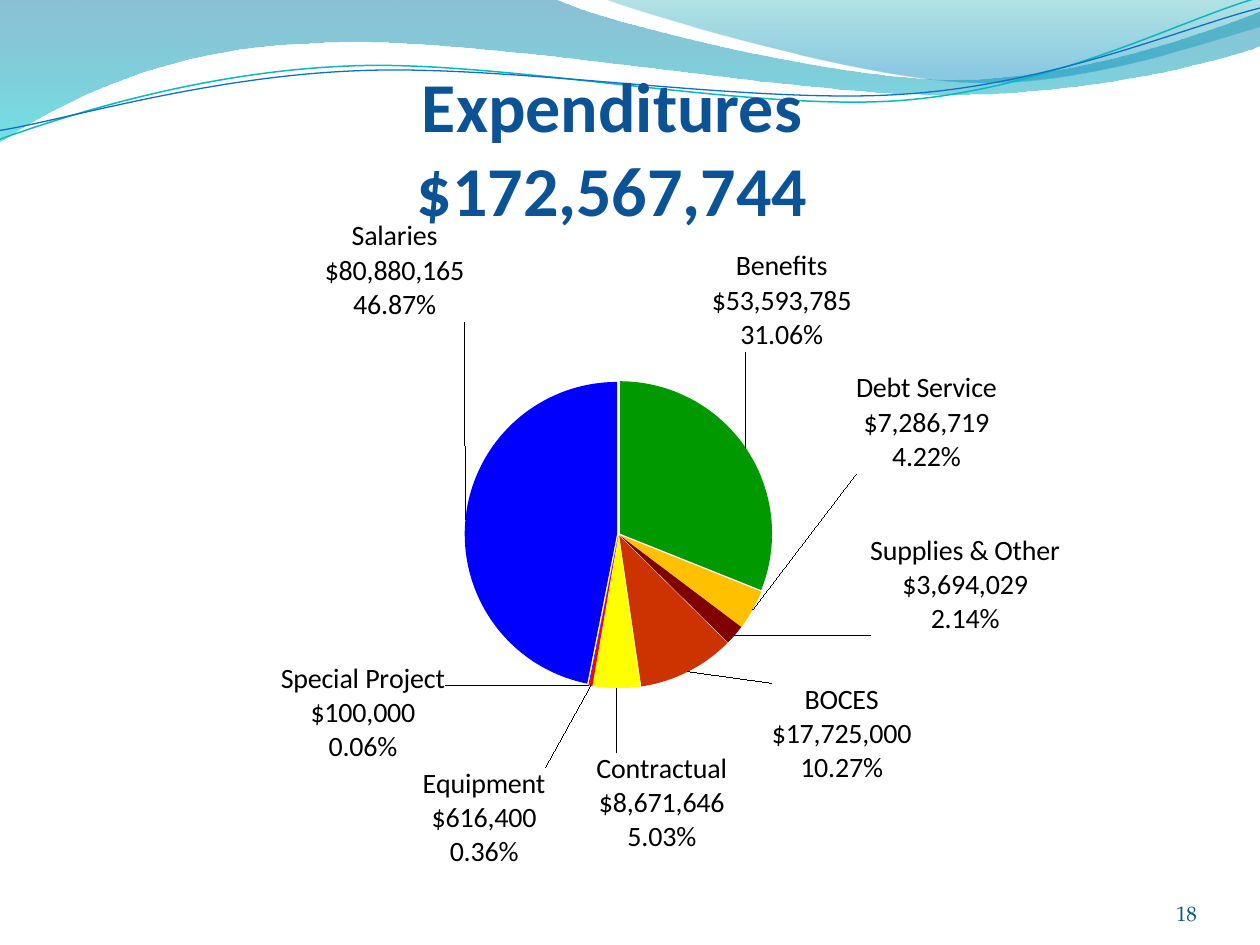
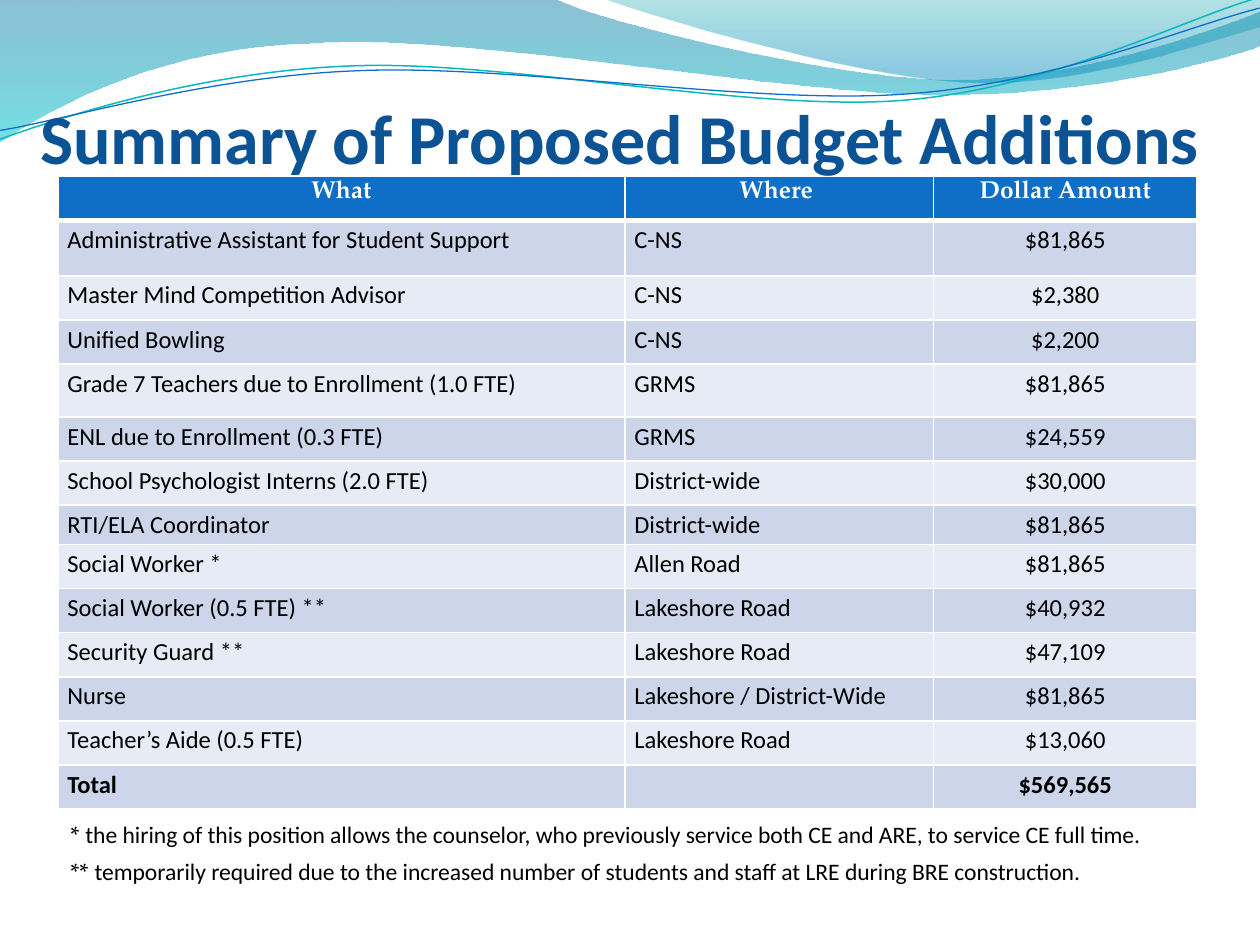
from lxml import etree
from pptx import Presentation
from pptx.chart.data import CategoryChartData
from pptx.dml.color import RGBColor
from pptx.enum.chart import XL_CHART_TYPE as ChartType
from pptx.enum.text import MSO_ANCHOR as Anchor, MSO_AUTO_SIZE as AutoSize, PP_ALIGN as Align
from pptx.oxml import parse_xml
from pptx.oxml.ns import nsdecls, qn
from pptx.util import Inches, Pt

BLACK = RGBColor(0, 0, 0)
WHITE = RGBColor(0xFF, 0xFF, 0xFF)
TITLE_BLUE = RGBColor(0x0B, 0x53, 0x94)
NUMBER_TEAL = RGBColor(0x04, 0x5D, 0x75)
HEADER_BLUE = RGBColor(0x0F, 0x6F, 0xC6)
LINE_TEAL = RGBColor(0x0A, 0xB8, 0xBF)
BAND_DARK = RGBColor(0xCC, 0xD5, 0xEA)
BAND_LIGHT = RGBColor(0xE7, 0xEB, 0xF5)
WAVE_NAVY = RGBColor(0x00, 0x74, 0xA1)
WAVE_CYAN = RGBColor(0x00, 0xC6, 0xCF)
WAVE_TEAL = RGBColor(0x00, 0xA1, 0xA9)
WAVE_SKY = RGBColor(0x00, 0x8B, 0xBF)
SANS = "Calibri"
SERIF = "TeX Gyre Pagella"

prs = Presentation()
prs.slide_width, prs.slide_height = Inches(10), Inches(7.5)
title_only = prs.slide_layouts[5]


def add_titled_slide(title, left, top, width, height):
    slide = prs.slides.add_slide(title_only)
    heading = slide.shapes.title
    heading.left, heading.top = Inches(left), Inches(top)
    heading.width, heading.height = Inches(width), Inches(height)
    frame = heading.text_frame
    frame.text = title
    frame.auto_size = AutoSize.NONE
    frame.vertical_anchor = Anchor.BOTTOM
    frame.margin_left = frame.margin_right = frame.margin_bottom = 0
    paragraph = frame.paragraphs[0]
    paragraph.alignment = Align.CENTER
    font = paragraph.font
    font.name, font.size, font.bold = SANS, Pt(40), True
    font.color.rgb = TITLE_BLUE
    return slide


def add_curve(shapes, segments, closed):
    """Draw a start point followed by segments of one point (line) or three (cubic curve)."""
    points = [(Inches(x), Inches(y)) for segment in segments for x, y in segment]
    builder = shapes.build_freeform(*points[0])
    builder.add_line_segments(points[1:], close=closed)
    curve = builder.convert_to_shape()
    lines = iter(list(curve.element.iter(qn("a:lnTo"))))
    for segment in segments[1:]:
        steps = [next(lines) for _ in segment]
        if len(steps) == 3:
            bezier = etree.Element(qn("a:cubicBezTo"))
            steps[0].addprevious(bezier)
            for step in steps:
                bezier.append(step[0])
                step.getparent().remove(step)
    curve.shadow.inherit = False
    return curve


expenditures = add_titled_slide("Expenditures \v$172,567,744 ", 0.42, 0.75, 9, 1.08)
additions = add_titled_slide("Summary of Proposed Budget Additions ", 0.27, 0.83, 9.42, 0.59)

# Waves across the top, shared through the slide master
wide_wave = [[(0, 0)], [(4.4, -0.01)],
             [(4.76, 0.17), (6.64, 0.63), (7.58, 0.63)],
             [(8.53, 0.63), (9.58, 0.26), (10, 0.09)], [(10.01, 0.36)],
             [(9.83, 0.44), (8.7, 0.76), (7.46, 0.75)],
             [(6.22, 0.75), (3.82, 0.28), (2.57, 0.34)],
             [(1.29, 0.36), (0.46, 0.83), (-0.01, 1.13)], [(0, 0)]]
right_wave = [[(4.79, -0.01)],
              [(5.09, 0.11), (6.82, 0.62), (7.69, 0.65)],
              [(8.56, 0.69), (9.61, 0.32), (10, 0.21)], [(10, 0)], [(4.79, -0.01)]]
teal_line = [[(-0.02, 0.87)],
             [(0.47, 0.72), (1.58, 0.41), (2.77, 0.42)],
             [(3.96, 0.42), (5.91, 0.93), (7.12, 0.9)],
             [(8.32, 0.87), (9.4, 0.36), (10, 0.22)]]
blue_line = [[(-0.02, 0.8)],
             [(0.46, 0.75), (1.64, 0.45), (2.83, 0.46)],
             [(4.03, 0.46), (5.96, 0.88), (7.16, 0.85)],
             [(8.35, 0.83), (9.42, 0.42), (10.02, 0.3)]]
LINE_TILT = 357.3
filled_waves = [
    (wide_wave, [(0, WAVE_NAVY, 45), (1, WAVE_CYAN, 55)]),
    (right_wave, [(0, WAVE_TEAL, 30), (0.8, WAVE_SKY, 45)]),
]
wave_lines = [(teal_line, LINE_TEAL, 0.85), (blue_line, HEADER_BLUE, 0.75)]
waves = []
for segments, gradient in filled_waves:
    wave = add_curve(expenditures.shapes, segments, True)
    wave.line.fill.background()
    wave.fill.gradient()
    wave.fill.gradient_angle = 270
    for stop, (place, color, _) in zip(wave.fill.gradient_stops, gradient):
        stop.position, stop.color.rgb = place, color
    for color, (_, _, opacity) in zip(wave.element.iter(qn("a:srgbClr")), gradient):
        etree.SubElement(color, qn("a:alpha"), val=str(opacity * 1000))
    waves.append(wave)
for segments, color, weight in wave_lines:
    wave = add_curve(expenditures.shapes, segments, False)
    wave.rotation = LINE_TILT
    wave.fill.background()
    wave.line.color.rgb, wave.line.width = color, Pt(weight)
    waves.append(wave)
master_tree = prs.slide_master.element.cSld.spTree
for position, wave in enumerate(waves, start=2):
    master_tree.insert(position, wave.element)

# Expenditures: category, amount, slice colour, label offset in inches
spending = [
    ("Benefits", 53593785, "009900", -0.32, -0.73),
    ("Debt Service", 7286719, "FFC000", 0.77, -1.92),
    ("Supplies & Other", 3694029, "800000", 1.03, -0.84),
    ("BOCES", 17725000, "CC3300", 0.64, 0.04),
    ("Contractual", 8671646, "FFFF00", 0.36, 0.45),
    ("Equipment", 616400, "FF0000", -0.35, 0.59),
    ("Special Project", 100000, "0000FF", -1.13, -0.24),
    ("Salaries", 80880165, "0000FF", 0.05, -1.56),
]
CHART_WIDTH, CHART_HEIGHT = 9.08, 6.25
pie_data = CategoryChartData(number_format='"$"#,##0')
pie_data.categories = [row[0] for row in spending]
pie_data.add_series("Series 1", [row[1] for row in spending])
pie = expenditures.shapes.add_chart(ChartType.PIE, Inches(1.5), Inches(0.87), Inches(CHART_WIDTH),
                                    Inches(CHART_HEIGHT), pie_data).chart
pie.has_title = pie.has_legend = False
pie.font.name, pie.font.size = SERIF, Pt(18)
pie.font.color.rgb = BLACK
pie.plots[0].vary_by_categories = True

series = pie.plots[0].series[0]
for index, (_, _, color, _, _) in enumerate(spending):
    slice_format = series.points[index].format
    slice_format.fill.solid()
    slice_format.fill.fore_color.rgb = RGBColor.from_string(color)
    slice_format.line.fill.background()
series_xml = series._element
series_xml.find(qn("c:dPt")).addprevious(parse_xml(f'<c:explosion {nsdecls("c")} val="1"/>'))

label_style = f"""<c:numFmt formatCode="0.00%" sourceLinked="0"/>
  <c:spPr><a:noFill/><a:ln><a:noFill/></a:ln></c:spPr>
  <c:txPr><a:bodyPr/><a:p><a:pPr><a:defRPr sz="1600"><a:solidFill><a:srgbClr val="{BLACK}"/></a:solidFill>
  <a:latin typeface="{SANS}"/></a:defRPr></a:pPr><a:endParaRPr lang="en-US"/></a:p></c:txPr>
  <c:dLblPos val="bestFit"/><c:showLegendKey val="0"/><c:showVal val="1"/><c:showCatName val="1"/>
  <c:showSerName val="0"/><c:showPercent val="1"/><c:showBubbleSize val="0"/>
  <c:separator>\n</c:separator>"""
point_labels = "".join(
    f'<c:dLbl><c:idx val="{index}"/><c:layout><c:manualLayout><c:x val="{dx / CHART_WIDTH:.4f}"/>'
    f'<c:y val="{dy / CHART_HEIGHT:.4f}"/></c:manualLayout></c:layout>{label_style}</c:dLbl>'
    for index, (_, _, _, dx, dy) in enumerate(spending))
series_xml.find(qn("c:cat")).addprevious(parse_xml(
    f'<c:dLbls {nsdecls("c", "a")}>{point_labels}{label_style}<c:showLeaderLines val="1"/></c:dLbls>'))

plot_area = pie._chartSpace.find(f'.//{qn("c:plotArea")}')
for automatic in plot_area.findall(qn("c:layout")):
    plot_area.remove(automatic)
plot_area.insert(0, parse_xml(
    f'<c:layout {nsdecls("c")}><c:manualLayout><c:layoutTarget val="inner"/>'
    '<c:xMode val="edge"/><c:yMode val="edge"/><c:x val="0.241"/><c:y val="0.313"/>'
    '<c:w val="0.269"/><c:h val="0.453"/></c:manualLayout></c:layout>'))

number_frame = expenditures.shapes.add_textbox(Inches(8.67), Inches(6.95), Inches(0.83),
                                               Inches(0.4)).text_frame
number_frame.word_wrap = True
number_frame.vertical_anchor = Anchor.BOTTOM
number_frame.margin_left = number_frame.margin_right = 0
number_frame.margin_top = number_frame.margin_bottom = 0
number_frame.text = "18"
page_number = number_frame.paragraphs[0]
page_number.alignment = Align.RIGHT
page_number.font.name, page_number.font.size = SERIF, Pt(12)
page_number.font.color.rgb = NUMBER_TEAL

# Budget additions
budget_rows = [
    ("What", "Where ", "Dollar Amount"),
    ("Administrative Assistant for Student Support", "C-NS", "$81,865"),
    ("Master Mind Competition Advisor", "C-NS", "$2,380"),
    ("Unified Bowling", "C-NS", "$2,200"),
    ("Grade 7 Teachers due to Enrollment (1.0 FTE)", "GRMS", "$81,865"),
    ("ENL due to Enrollment (0.3 FTE)", "GRMS", "$24,559"),
    ("School Psychologist Interns (2.0 FTE)", "District-wide", "$30,000"),
    ("RTI/ELA Coordinator", "District-wide", "$81,865"),
    ("Social Worker *", "Allen Road", "$81,865"),
    ("Social Worker (0.5 FTE) **", "Lakeshore Road", "$40,932"),
    ("Security Guard **", "Lakeshore Road", "$47,109"),
    ("Nurse", "Lakeshore / District-Wide", "$81,865"),
    ("Teacher’s Aide (0.5 FTE)", "Lakeshore Road", "$13,060"),
    ("Total", "", "$569,565"),
]
special_heights = {1: 0.44, 4: 0.42, 7: 0.1}
header_borders = {"lnL": 1, "lnR": 1, "lnT": 1, "lnB": 3}
last_row = len(budget_rows) - 1
budget = additions.shapes.add_table(len(budget_rows), 3, Inches(0.46), Inches(1.4),
                                    Inches(9.04), Inches(5.03)).table
for column, width in zip(budget.columns, (4.5, 2.45, 2.09)):
    column.width = Inches(width)
for r, texts in enumerate(budget_rows):
    budget.rows[r].height = Inches(special_heights.get(r, 0.35))
    is_header = r == 0
    for c, text in enumerate(texts):
        cell = budget.cell(r, c)
        cell.margin_left = cell.margin_right = Pt(5.4)
        cell.margin_top = cell.margin_bottom = Pt(2.7)
        cell.fill.solid()
        cell.fill.fore_color.rgb = HEADER_BLUE if is_header else BAND_DARK if r % 2 else BAND_LIGHT
        if is_header:
            cell_xml = budget._tbl.tr_lst[r].tc_lst[c].get_or_add_tcPr()
            for place, (side, weight) in enumerate(header_borders.items()):
                cell_xml.insert(place, parse_xml(
                    f'<a:{side} {nsdecls("a")} w="{Pt(weight)}"><a:solidFill>'
                    f'<a:srgbClr val="{WHITE}"/></a:solidFill></a:{side}>'))
        cell.text = text
        paragraph = cell.text_frame.paragraphs[0]
        paragraph.alignment = Align.CENTER if is_header or c == 2 else Align.LEFT
        font = paragraph.font
        font.name, font.size = SERIF if is_header else SANS, Pt(14)
        font.bold = r in (0, last_row)
        font.color.rgb = WHITE if is_header else BLACK

footnotes = [
    (6.46, 8.79, "* ", "the hiring of this position allows the counselor, who previously service "
                       "both CE and ARE, to service CE full time."),
    (6.75, 8.31, "** ", "temporarily required due to the increased number of students and staff "
                        "at LRE during BRE construction."),
]
for top, width, mark, note in footnotes:
    frame = additions.shapes.add_textbox(Inches(0.46), Inches(top), Inches(width),
                                         Inches(0.33)).text_frame
    frame.word_wrap = True
    frame.auto_size = AutoSize.SHAPE_TO_FIT_TEXT
    paragraph = frame.paragraphs[0]
    paragraph.font.size = Pt(13.5)
    paragraph.font.color.rgb = BLACK
    for text, typeface in ((mark, SERIF), (note, SANS)):
        run = paragraph.add_run()
        run.text, run.font.name = text, typeface

prs.save("out.pptx")
